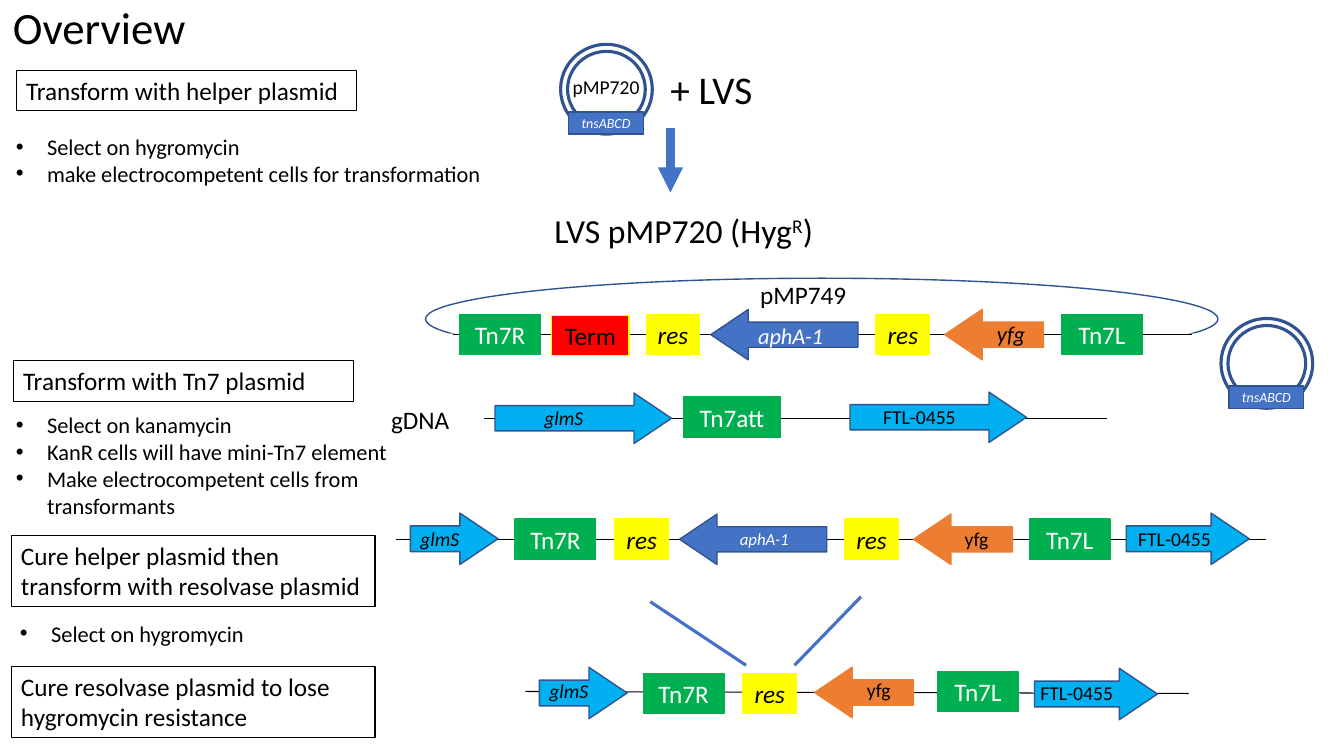
"""Build the overview slide of the Tn7 plasmid workflow."""
from pptx import Presentation
from pptx.dml.color import RGBColor
from pptx.enum.shapes import MSO_CONNECTOR, MSO_SHAPE
from pptx.enum.text import MSO_ANCHOR, PP_ALIGN
from pptx.oxml.ns import qn
from pptx.util import Pt
from lxml.etree import SubElement

PX = 9144
THEME = {
    "font": "Calibri",
    "black": "000000", "white": "FFFFFF", "blue": "4472C4", "navy": "31538F",
    "sky": "00B0F0", "green": "00B050", "yellow": "FFFF00", "orange": "ED7D31", "red": "FF0000",
    "title": 32, "strain": 28, "result": 24, "heading": 18, "body": 16,
    "gene": 14, "small": 12, "tiny": 10,
}

deck = Presentation()
deck.slide_width, deck.slide_height = 1333 * PX, 750 * PX
slide = deck.slides.add_slide(deck.slide_layouts[6])


def draw(kind, box, fill=None, outline=None, weight=1, adjust=()):
    """Add a preset shape with a plain fill and outline."""
    shape = slide.shapes.add_shape(kind, *(n * PX for n in box))
    shape.shadow.inherit = False
    for paint, colour in ((shape.fill, fill), (shape.line.fill, outline)):
        if colour:
            paint.solid()
            paint.fore_color.rgb = RGBColor.from_string(THEME[colour])
        else:
            paint.background()
    if outline:
        shape.line.width = Pt(weight)
    for index, value in enumerate(adjust):
        shape.adjustments[index] = value
    return shape


def write(shape, paragraphs, size, colour="black", italic=False,
          align=PP_ALIGN.LEFT, anchor=MSO_ANCHOR.TOP):
    """Fill a shape with paragraphs, each a list of runs; return the paragraphs."""
    frame = shape.text_frame
    frame.word_wrap = True
    frame.vertical_anchor = anchor
    for index, runs in enumerate(paragraphs):
        paragraph = frame.add_paragraph() if index else frame.paragraphs[0]
        paragraph.alignment = align
        for words in runs:
            run = paragraph.add_run()
            run.text = words
            run.font.name = THEME["font"]
            run.font.size = Pt(THEME[size])
            run.font.italic = italic
            run.font.color.rgb = RGBColor.from_string(THEME[colour])
    return frame.paragraphs


title = slide.shapes.add_textbox(3 * PX, -16 * PX, 1150 * PX, 92 * PX)
write(title, [["Overview"]], "title", anchor=MSO_ANCHOR.MIDDLE)[0].line_spacing = 0.9

for words, *box in (
    ("Transform with helper plasmid", 16, 70, 338, 40),
    ("Transform with Tn7 plasmid", 13, 358, 338, 40),
    ("Cure helper plasmid then transform with resolvase plasmid", 11, 531, 361, 71),
    ("Cure resolvase plasmid to lose hygromycin resistance", 11, 661, 361, 71),
):
    write(draw(MSO_SHAPE.RECTANGLE, box, None, "black", 0.75), [[words]], "heading")

for box, notes in (
    ((6, 127, 486, 64), ["Select on hygromycin", "make electrocompetent cells for transformation"]),
    ((6, 403, 486, 118), ["Select on kanamycin", "KanR cells will have mini-Tn7 element",
                          "Make electrocompetent cells from transformants"]),
    ((10, 610, 323, 101), ["Select on hygromycin"]),
):
    note_box = slide.shapes.add_textbox(*(n * PX for n in box))
    for paragraph in write(note_box, [[note] for note in notes], "body"):
        properties = paragraph._p.get_or_add_pPr()
        properties.set("marL", str(31 * PX))
        properties.set("indent", str(-31 * PX))
        SubElement(properties, qn("a:buFont"), typeface="Arial")
        SubElement(properties, qn("a:buChar"), char="•")

draw(MSO_SHAPE.OVAL, (422, 276, 786, 81), None, "navy")
draw(MSO_SHAPE.RECTANGLE, (385, 331, 845, 44), "white")

for ends, colour, weight, pointed in (
    ((449, 332, 1182, 332), "black", 0.75, False),
    ((480, 415, 1098, 415), "black", 0.75, False),
    ((393, 535, 1256, 535), "black", 0.75, False),
    ((521, 686, 1179, 688), "black", 0.75, False),
    ((645, 597, 740, 660), "blue", 2.25, False),
    ((854, 592, 788, 660), "blue", 2.25, False),
    ((665, 127, 665, 191), "blue", 6, True),
):
    strand = slide.shapes.add_connector(MSO_CONNECTOR.STRAIGHT, *(n * PX for n in ends))
    strand.line.color.rgb = RGBColor.from_string(THEME[colour])
    strand.line.width = Pt(weight)
    if pointed:
        SubElement(strand.line._get_or_add_ln(), qn("a:tailEnd"), type="triangle")
    SubElement(strand._element.spPr, qn("a:effectLst"))

for left, top in ((556, 44), (1211, 316)):
    draw(MSO_SHAPE.DONUT, (left, top, 91, 89), "white", "navy", 2.25, [0.078])
    operon = draw(MSO_SHAPE.RECTANGLE, (left + 8, top + 67, 74, 22), "blue", "navy")
    write(operon, [["tnsABCD"]], "tiny", "white", True, PP_ALIGN.CENTER, MSO_ANCHOR.MIDDLE)

SITES = {
    "Tn7R": (80, "green", "green", "white"),
    "Tn7L": (80, "green", "green", "white"),
    "Tn7att": (96, "green", "green", "white"),
    "res": (53, "yellow", "yellow", "black"),
    "Term": (77, "red", "yellow", "black"),
}
for name, left, top in (
    ("Tn7R", 456, 312), ("Term", 547, 313), ("res", 641, 312), ("res", 869, 312),
    ("Tn7L", 1053, 312), ("Tn7att", 678, 394),
    ("Tn7R", 511, 515), ("res", 610, 515), ("res", 838, 515), ("Tn7L", 1021, 515),
    ("Tn7R", 638, 668), ("res", 737, 668), ("Tn7L", 930, 666),
):
    width, fill, outline, ink = SITES[name]
    site = draw(MSO_SHAPE.RECTANGLE, (left, top, width, 40), fill, outline)
    write(site, [[name]], "heading", ink, name == "res", PP_ALIGN.CENTER, MSO_ANCHOR.MIDDLE)

GENES = {
    "glmS": ("sky", "navy", 0),
    "FTL-0455": ("sky", "navy", 0),
    "aphA-1": ("blue", "navy", 180),
    "yfg": ("orange", "orange", 180),
}
for name, *box in (
    ("aphA-1", 705, 307, 146, 50), ("yfg", 937, 307, 98, 50),
    ("glmS", 491, 390, 175, 50), ("FTL-0455", 843, 389, 175, 50),
    ("glmS", 407, 509, 87, 51), ("aphA-1", 674, 510, 146, 50),
    ("yfg", 906, 510, 98, 50), ("FTL-0455", 1117, 509, 122, 51),
    ("glmS", 535, 662, 87, 51), ("yfg", 808, 662, 98, 50), ("FTL-0455", 1026, 663, 122, 51),
):
    fill, outline, turn = GENES[name]
    draw(MSO_SHAPE.RIGHT_ARROW, box, fill, outline, 1, [0.5, 0.742]).rotation = turn

for words, size, colour, italic, *box in (
    ("aphA-1", "body", "white", True, 742, 315, 101, 37),
    ("yfg", "body", "black", True, 979, 313, 57, 37),
    ("glmS", "gene", "black", True, 530, 398, 63, 34),
    ("FTL-0455", "gene", "black", False, 866, 397, 105, 34),
    ("glmS", "gene", "black", True, 407, 518, 63, 34),
    ("aphA-1", "small", "white", True, 724, 520, 74, 30),
    ("yfg", "gene", "black", False, 947, 518, 57, 34),
    ("FTL-0455", "gene", "black", False, 1119, 518, 105, 34),
    ("glmS", "gene", "black", True, 535, 669, 63, 34),
    ("yfg", "gene", "black", False, 850, 668, 57, 34),
    ("FTL-0455", "gene", "black", False, 1022, 671, 105, 34),
    ("pMP720", "gene", "black", False, 558, 69, 88, 34),
    ("pMP749", "heading", "black", False, 744, 272, 106, 40),
    ("gDNA", "heading", "black", False, 378, 396, 79, 40),
    ("+ LVS", "strain", "black", False, 655, 60, 103, 57),
):
    label = slide.shapes.add_textbox(*(n * PX for n in box))
    write(label, [[words]], size, colour, italic)

resistant_strain = slide.shapes.add_textbox(540 * PX, 203 * PX, 280 * PX, 50 * PX)
strain_line = write(resistant_strain, [["LVS pMP720 (Hyg", "R", ")"]], "result")[0]
strain_line.runs[1].font._element.set("baseline", "30000")

deck.save("out.pptx")
